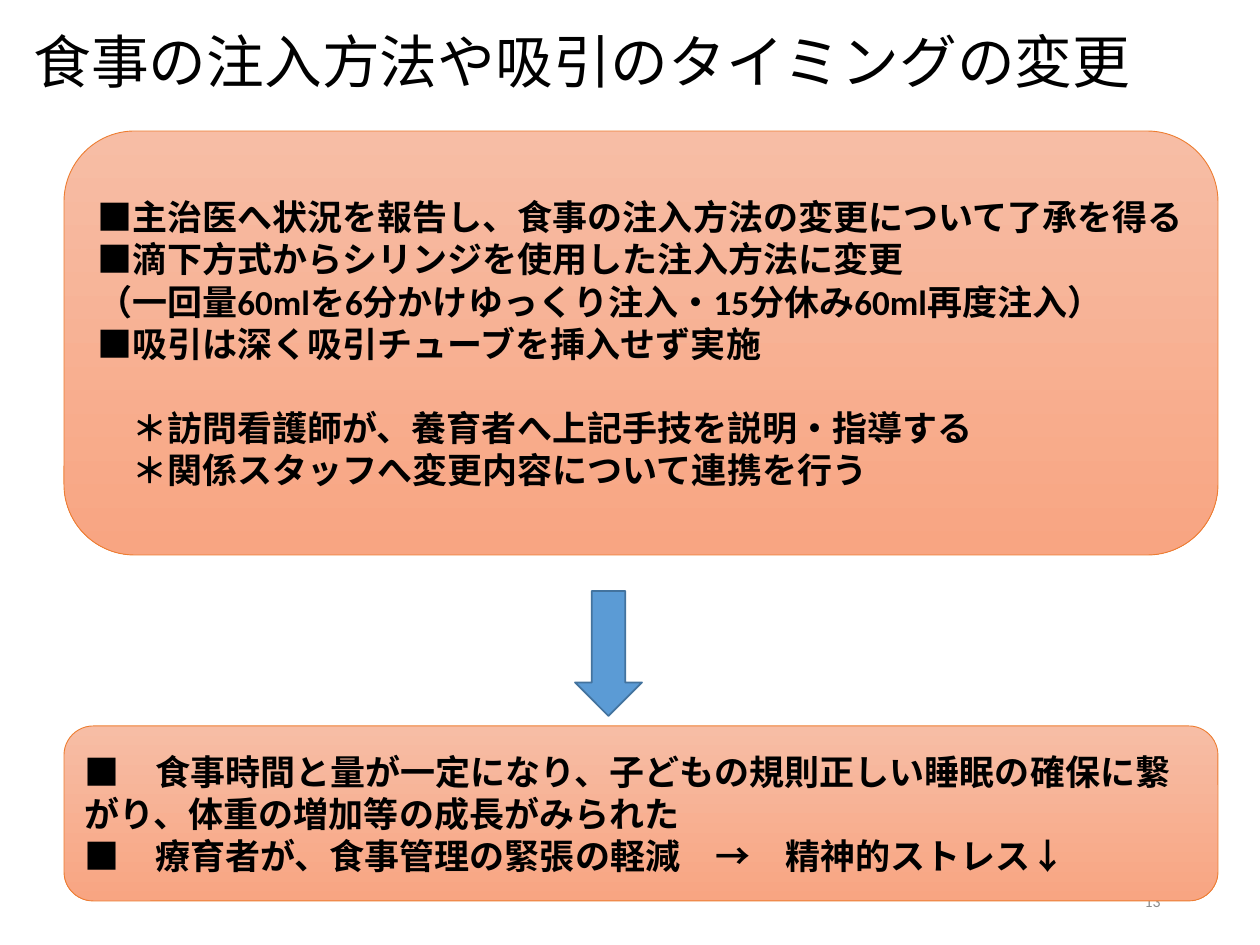
from pptx import Presentation
from pptx.dml.color import RGBColor
from pptx.enum import shapes, text
from pptx.util import Emu, Pt

SCALE = 914400 / 126
COLORS = {
    "ink": "000000",
    "number": "8C8C8C",
    "panel_top": "F7BDA5",
    "panel_bottom": "F8A582",
    "panel_line": "ED7D31",
    "arrow": "5B9BD5",
    "arrow_line": "43739E",
}
METHOD_LINES = [
    ("■主治医へ状況を報告し、食事の注入方法の変更について了承を得る", {}),
    ("■滴下方式からシリンジを使用した注入方法に変更", {}),
    ("（一回量60mlを6分かけゆっくり注入・15分休み60ml再度注入）", {}),
    ("■吸引は深く吸引チューブを挿入せず実施", {}),
    ("＊訪問看護師が、養育者へ上記手技を説明・指導する", {"indent": 35, "before": 24}),
    ("＊関係スタッフへ変更内容について連携を行う", {"indent": 35}),
]
RESULT_LINES = [
    ("■　食事時間と量が一定になり、子どもの規則正しい睡眠の確保に繋がり、体重の増加等の成長がみられた", {}),
    ("■　療育者が、食事管理の緊張の軽減　→　精神的ストレス↓", {}),
]


def px(length):
    return Emu(round(length * SCALE))


def color(name):
    return RGBColor.from_string(COLORS[name])


def set_all(target, values):
    for name, value in values.items():
        setattr(target, name, value)


def write_lines(shape, lines, size, ink="ink", bold=False, align=text.PP_ALIGN.LEFT, spacing=1.0):
    frame = shape.text_frame
    set_all(frame, {"word_wrap": True, "vertical_anchor": text.MSO_ANCHOR.MIDDLE})
    for index, (words, layout) in enumerate(lines):
        para = frame.add_paragraph() if index else frame.paragraphs[0]
        set_all(para, {
            "alignment": align,
            "line_spacing": spacing,
            "space_before": Pt(layout.get("before", 0)),
        })
        if "indent" in layout:
            para._p.get_or_add_pPr().set("marL", str(px(layout["indent"])))
        span = para.add_run()
        span.text = words
        set_all(span.font, {"name": "Calibri", "size": Pt(size), "bold": bold})
        span.font.color.rgb = color(ink)


def add_label(page, box, words, **style):
    label = page.shapes.add_textbox(*map(px, box))
    write_lines(label, [(words, {})], **style)


def add_outlined(page, kind, box, line, width):
    shape = page.shapes.add_shape(kind, *map(px, box))
    shape.shadow.inherit = False
    shape.line.color.rgb = color(line)
    shape.line.width = Pt(width)
    return shape


def add_panel(page, box, lines):
    panel = add_outlined(page, shapes.MSO_SHAPE.ROUNDED_RECTANGLE, box, "panel_line", 0.5)
    panel.fill.gradient()
    panel.fill.gradient_angle = 270
    for stop, name in zip(panel.fill.gradient_stops, ("panel_top", "panel_bottom")):
        stop.color.rgb = color(name)
    write_lines(panel, lines, 20, bold=True)


def add_down_arrow(page, box):
    arrow = add_outlined(page, shapes.MSO_SHAPE.DOWN_ARROW, box, "arrow_line", 1)
    arrow.fill.solid()
    arrow.fill.fore_color.rgb = color("arrow")


def main():
    deck = Presentation()
    set_all(deck, {"slide_width": px(1260), "slide_height": px(945)})
    page = deck.slides.add_slide(deck.slide_layouts[6])
    add_label(page, (21, 16, 1198, 98), "食事の注入方法や吸引のタイミングの変更", size=33, spacing=0.9)
    add_panel(page, (64, 131, 1154, 424), METHOD_LINES)
    add_label(page, (890, 876, 283, 50), "13", size=9, ink="number", align=text.PP_ALIGN.RIGHT)
    add_down_arrow(page, (575, 591, 67, 125))
    add_panel(page, (64, 726, 1154, 175), RESULT_LINES)
    deck.save("out.pptx")


if __name__ == "__main__":
    main()
